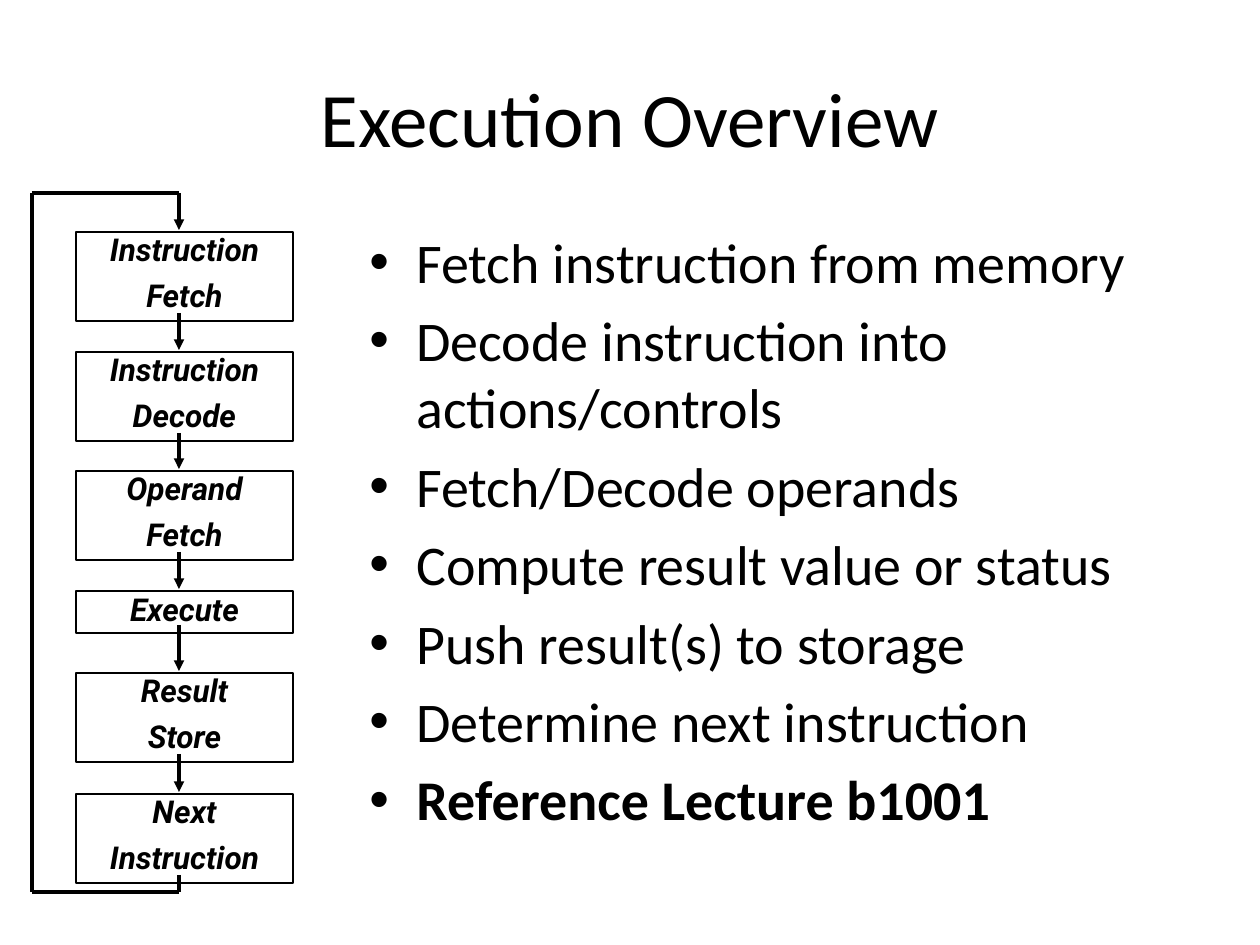
from pptx import Presentation
from pptx.dml.color import RGBColor
from pptx.enum.shapes import MSO_CONNECTOR as Connector, MSO_SHAPE as Shape
from pptx.enum.text import MSO_ANCHOR as Anchor, PP_ALIGN as Align
from pptx.oxml.ns import qn
from pptx.util import Pt
from lxml.etree import SubElement

SCALE = 914400 / 126
COLORS = {"ink": "000000", "paper": "FFFFFF"}
INK = RGBColor.from_string(COLORS["ink"])


def px(*lengths):
    return [round(length * SCALE) for length in lengths]


def add_line(start, end, arrow=False):
    line = slide.shapes.add_connector(Connector.STRAIGHT, *px(*start, *end))
    line.line.color.rgb = INK
    line.line.width = Pt(2)
    if arrow:
        SubElement(line.line._get_or_add_ln(), qn("a:tailEnd"), type="triangle")
    SubElement(line._element.spPr, qn("a:effectLst"))


deck = Presentation()
deck.slide_width, deck.slide_height = px(1260, 945)
slide = deck.slides.add_slide(deck.slide_layouts[6])
slide.background.fill.solid()
slide.background.fill.fore_color.rgb = RGBColor.from_string(COLORS["paper"])

title = slide.shapes.add_textbox(*px(63, 38, 1134, 157)).text_frame
title.word_wrap = True
title.vertical_anchor = Anchor.MIDDLE
title.paragraphs[0].alignment = Align.CENTER
heading = title.paragraphs[0].add_run()
heading.text = "Execution Overview"
heading.font.name = "Calibri"
heading.font.size = Pt(44)
heading.font.color.rgb = INK

steps = [
    ("Fetch instruction from memory", False),
    ("Decode instruction into actions/controls", False),
    ("Fetch/Decode operands", False),
    ("Compute result value or status", False),
    ("Push result(s) to storage", False),
    ("Determine next instruction", False),
    ("Reference Lecture b1001", True),
]
explanation = slide.shapes.add_textbox(*px(357, 221, 840, 672)).text_frame
explanation.word_wrap = True
indent = px(47)[0]
for index, (step, bold) in enumerate(steps):
    bullet = explanation.add_paragraph() if index else explanation.paragraphs[0]
    bullet.space_before = Pt(6.4)
    properties = bullet._p.get_or_add_pPr()
    properties.set("marL", str(indent))
    properties.set("indent", str(-indent))
    SubElement(properties, qn("a:buFont"), typeface="Arial")
    SubElement(properties, qn("a:buChar"), char="•")
    run = bullet.add_run()
    run.text = step
    run.font.name = "Calibri"
    run.font.size = Pt(32)
    run.font.bold = bold
    run.font.color.rgb = INK

stages = [
    (232, 89, ["Instruction", "Fetch"]),
    (352, 89, ["Instruction", "Decode"]),
    (471, 89, ["Operand", "Fetch"]),
    (591, 42, ["Execute"]),
    (673, 89, ["Result", "Store"]),
    (794, 89, ["Next", "Instruction"]),
]
for top, height, words in stages:
    stage = slide.shapes.add_shape(Shape.RECTANGLE, *px(76, top, 217, height))
    stage.shadow.inherit = False
    stage.fill.background()
    stage.line.color.rgb = INK
    stage.line.width = Pt(1)
    label = stage.text_frame
    label.word_wrap = True
    label.vertical_anchor = Anchor.TOP
    label.margin_left, label.margin_right = px(9, 9)
    label.margin_top, label.margin_bottom = px(4, 4)
    for index, word in enumerate(words):
        line = label.add_paragraph() if index else label.paragraphs[0]
        line.alignment = Align.CENTER
        line.line_spacing = 0.86
        line.space_before = Pt(7.5)
        run = line.add_run()
        run.text = word
        run.font.name = "Roboto"
        run.font.size = Pt(18)
        run.font.bold = True
        run.font.italic = True
        run.font.color.rgb = INK

flow_x, return_x = 179, 32
loop_top, loop_bottom = 193, 892
for (top, height, _), (next_top, _, _) in zip(stages, stages[1:]):
    add_line((flow_x, top + height - 8), (flow_x, next_top - 2), arrow=True)

loop = [
    (flow_x, 875),
    (flow_x, loop_bottom),
    (return_x, loop_bottom),
    (return_x, loop_top),
    (flow_x, loop_top),
    (flow_x, stages[0][0] - 2),
]
for start, end in zip(loop, loop[1:]):
    add_line(start, end, arrow=end == loop[-1])

deck.save("out.pptx")
